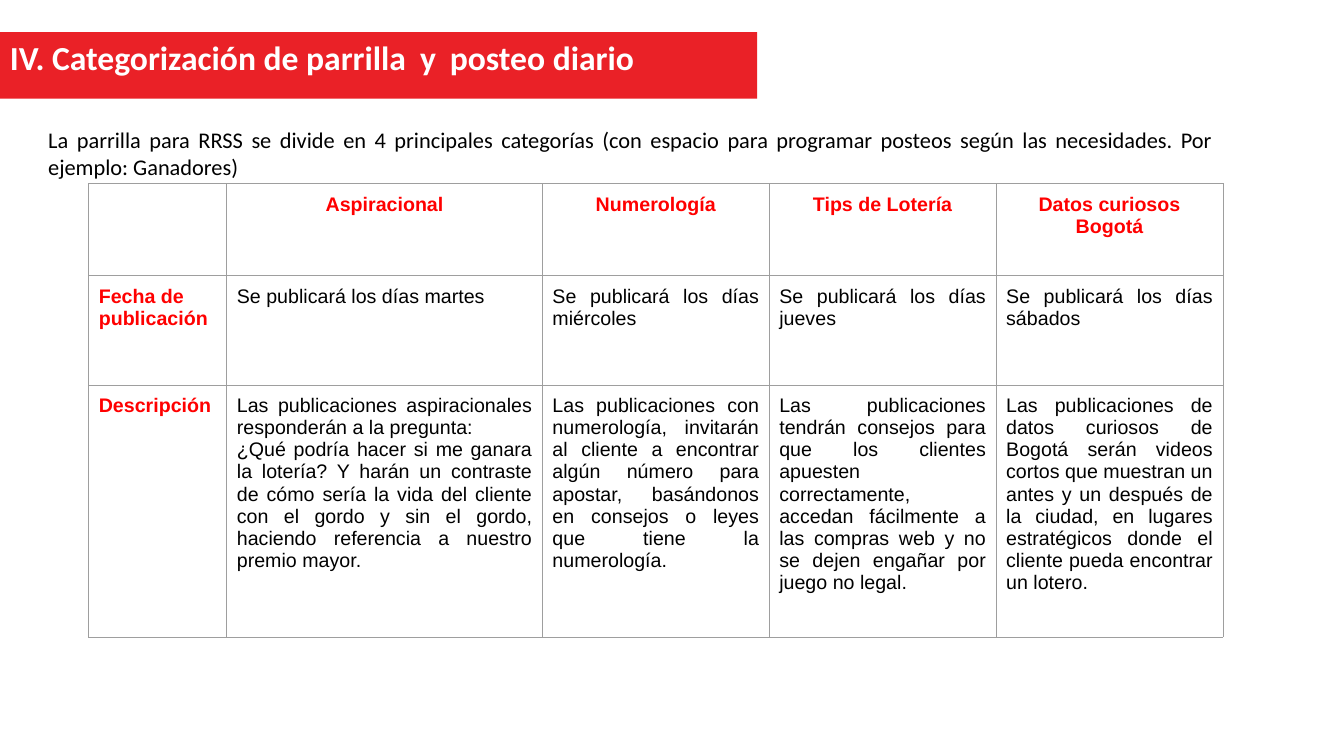
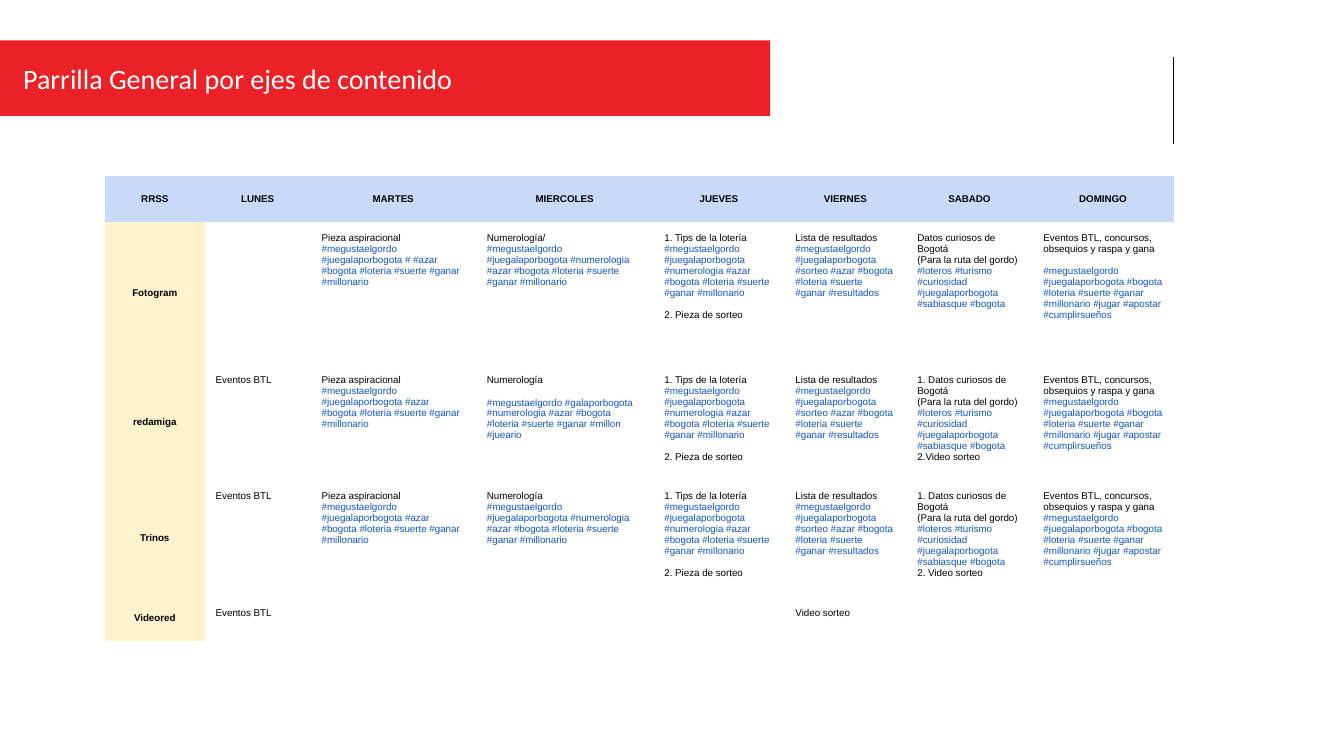
from lxml import etree
from pptx import Presentation
from pptx import util as u
from pptx.dml.color import RGBColor
from pptx.enum import shapes, text
from pptx.oxml.ns import qn

RED = RGBColor(0xEA, 0x21, 0x27)
LABEL_RED = RGBColor(0xFF, 0x00, 0x00)
WHITE = RGBColor(0xFF, 0xFF, 0xFF)
BLACK = RGBColor(0x00, 0x00, 0x00)
TAG_BLUE = RGBColor(0x11, 0x55, 0xCC)
HEADER_BLUE = RGBColor(0xC9, 0xDA, 0xF8)
NETWORK_CREAM = RGBColor(0xFF, 0xF2, 0xCC)
GRID_GREY = "9E9E9E"
PLAIN_TABLE = "{2D5ABB26-0587-4C30-8999-92F81FD0307C}"
TITLE_FONT, TABLE_FONT = "Calibri", "Arial"

INTRO = ("La parrilla para RRSS se divide en 4 principales categorías (con espacio para programar "
         "posteos según las necesidades. Por ejemplo: Ganadores)")

CATEGORIES = [
    [[], ["Aspiracional"], ["Numerología"], ["Tips de Lotería"], ["Datos curiosos Bogotá"]],
    [["Fecha de publicación"]] + [
        [f"Se publicará los días {day}"] for day in ("martes", "miércoles", "jueves", "sábados")],
    [["Descripción"],
     ["Las publicaciones aspiracionales responderán a la pregunta:",
      "¿Qué podría hacer si me ganara la lotería? Y harán un contraste de cómo sería la vida del "
      "cliente con el gordo y sin el gordo, haciendo referencia a nuestro premio mayor."],
     ["Las publicaciones con numerología, invitarán al cliente a encontrar algún número para "
      "apostar, basándonos en consejos o leyes que tiene la numerología."],
     ["Las publicaciones tendrán consejos para que los clientes apuesten correctamente, accedan "
      "fácilmente a las compras web y no se dejen engañar por juego no legal."],
     ["Las publicaciones de datos curiosos de Bogotá serán videos cortos que muestran un antes y "
      "un después de la ciudad, en lugares estratégicos donde el cliente pueda encontrar un "
      "lotero."]],
]

BTL = ["Eventos BTL"]
ASPIRATIONAL = ["Pieza aspiracional",
                "#megustaelgordo #juegalaporbogota #azar #bogota #loteria #suerte #ganar #millonario"]
NUMEROLOGY_TAGS = ("#megustaelgordo #juegalaporbogota #numerologia #azar #bogota #loteria #suerte "
                   "#ganar #millonario")
TIPS = ["1. Tips de la lotería", NUMEROLOGY_TAGS, "", "2. Pieza de sorteo"]
RESULTS = ["Lista de resultados",
           "#megustaelgordo #juegalaporbogota #sorteo #azar #bogota #loteria #suerte #ganar "
           "#resultados"]
FACTS = ["Datos curiosos de Bogotá", "(Para la ruta del gordo)",
         "#loteros #turismo #curiosidad #juegalaporbogota #sabiasque #bogota"]
NUMBERED_FACTS = ["1. " + FACTS[0]] + FACTS[1:]
EVENTS = "Eventos BTL, concursos, obsequios y raspa y gana"
EVENT_TAGS = ("#megustaelgordo #juegalaporbogota #bogota #loteria #suerte #ganar #millonario "
              "#jugar #apostar #cumplirsueños")

WEEK = [
    [[name] for name in ("RRSS", "LUNES", "MARTES", "MIERCOLES", "JUEVES", "VIERNES", "SABADO",
                         "DOMINGO")],
    [["Fotogram"], [],
     ["Pieza aspiracional",
      "#megustaelgordo #juegalaporbogota # #azar #bogota #loteria #suerte #ganar #millonario"],
     ["Numerología/", NUMEROLOGY_TAGS], TIPS, RESULTS, FACTS, [EVENTS, "", EVENT_TAGS]],
    [["redamiga"], BTL, ASPIRATIONAL,
     ["Numerología", "",
      "#megustaelgordo #galaporbogota #numerologia #azar #bogota #loteria #suerte #ganar #millon "
      "#jueario"],
     TIPS, RESULTS, NUMBERED_FACTS + ["2.Video sorteo"], [EVENTS, EVENT_TAGS]],
    [["Trinos"], BTL, ASPIRATIONAL, ["Numerología", NUMEROLOGY_TAGS], TIPS, RESULTS,
     NUMBERED_FACTS + ["2. Video sorteo"], [EVENTS, EVENT_TAGS]],
    [["Videored"], BTL, [], [], [], ["Video sorteo"], [], []],
]


def add_run(p, words, font, size, color, bold=False):
    """Append one formatted run to a paragraph."""
    r = p.add_run()
    r.text = words
    r.font.name, r.font.size, r.font.bold = font, u.Pt(size), bold
    r.font.color.rgb = color
    return r


def add_band(s, top, width, height, left_margin, anchor):
    """Draw the red title band and return its paragraph."""
    sp = s.shapes.add_shape(shapes.MSO_SHAPE.RECTANGLE, 0, u.Inches(top),
                            u.Inches(width), u.Inches(height))
    sp.shadow.inherit = False
    sp.fill.solid()
    sp.fill.fore_color.rgb = RED
    sp.line.fill.background()
    tf = sp.text_frame
    tf.word_wrap = True
    tf.margin_left = u.Inches(left_margin)
    tf.vertical_anchor = anchor
    p = tf.paragraphs[0]
    p.alignment = text.PP_ALIGN.LEFT
    return p


def add_grid(s, left, top, widths, heights):
    """Add an unstyled table with the given column widths and row heights."""
    frame = s.shapes.add_table(len(heights), len(widths), u.Inches(left), u.Inches(top),
                               u.Inches(sum(widths)), u.Inches(sum(heights)))
    table = frame.table
    table.first_row = table.horz_banding = False
    table._tbl.tblPr.find(qn("a:tableStyleId")).text = PLAIN_TABLE
    for column, width in zip(table.columns, widths):
        column.width = u.Inches(width)
    for row, height in zip(table.rows, heights):
        row.height = u.Inches(height)
    return table


def outline_cell(cell):
    """Give a cell a thin grey line on its four sides."""
    tc_pr = cell._tc.get_or_add_tcPr()
    for side in ("lnL", "lnR", "lnT", "lnB"):
        ln = etree.SubElement(tc_pr, qn("a:" + side), w=str(u.Pt(0.75)))
        fill = etree.SubElement(ln, qn("a:solidFill"))
        etree.SubElement(fill, qn("a:srgbClr"), val=GRID_GREY)


def fill_cell(cell, lines, size, margin, align, color=BLACK, bold=False, fill=None):
    """Write lines into a cell, with hashtags in blue and an empty line as a gap."""
    margin = u.Inches(margin)
    cell.margin_left = cell.margin_right = cell.margin_top = cell.margin_bottom = margin
    if fill is None:
        cell.fill.background()
    else:
        cell.fill.solid()
        cell.fill.fore_color.rgb = fill
        cell.vertical_anchor = text.MSO_ANCHOR.MIDDLE
    tf = cell.text_frame
    p = tf.paragraphs[0]
    if not lines:
        etree.SubElement(p._p, qn("a:endParaRPr"), sz=str(size * 100))
    gap = False
    for i, line in enumerate(lines):
        if not line:
            gap = True
            continue
        p = tf.add_paragraph() if i else p
        p.alignment = align
        if gap:
            p.space_before = u.Pt(size * 1.15)
            gap = False
        add_run(p, line, TABLE_FONT, size, TAG_BLUE if line.startswith("#") else color, bold)


def add_category_table(s, left, top):
    """Place the table of post categories."""
    table = add_grid(s, left, top, [1.37, 3.13] + [2.25] * 3, [0.91, 1.09, 2.5])
    for i, row in enumerate(CATEGORIES):
        for j, lines in enumerate(row):
            cell = table.cell(i, j)
            outline_cell(cell)
            label = i == 0 or j == 0
            align = (text.PP_ALIGN.CENTER if i == 0 else
                     text.PP_ALIGN.LEFT if j == 0 else text.PP_ALIGN.JUSTIFY)
            fill_cell(cell, lines, 14, 0.1, align, LABEL_RED if label else BLACK, label)


def add_week_table(s, left, top):
    """Place the weekly schedule by network."""
    table = add_grid(s, left, top, [0.99, 1.05, 1.64, 1.76, 1.3, 1.21, 1.25, 1.4],
                     [0.45, 1.41, 1.11, 1.13, 0.44])
    for i, row in enumerate(WEEK):
        for j, lines in enumerate(row):
            label = i == 0 or j == 0
            fill = HEADER_BLUE if i == 0 else NETWORK_CREAM if j == 0 else None
            align = text.PP_ALIGN.CENTER if label else text.PP_ALIGN.LEFT
            fill_cell(table.cell(i, j), lines, 7, 0.11, align, bold=label, fill=fill)


def add_intro(s, left, top, width, height):
    """Place the justified introduction."""
    tf = s.shapes.add_textbox(u.Inches(left), u.Inches(top),
                              u.Inches(width), u.Inches(height)).text_frame
    tf.word_wrap = True
    p = tf.paragraphs[0]
    p.alignment = text.PP_ALIGN.JUSTIFY
    add_run(p, INTRO, TITLE_FONT, 16, BLACK)


def add_rule(s, x, top, bottom):
    """Draw a thin vertical black line."""
    line = s.shapes.add_connector(shapes.MSO_CONNECTOR.STRAIGHT, u.Inches(x), u.Inches(top),
                                  u.Inches(x), u.Inches(bottom))
    line.line.color.rgb = BLACK
    line.line.width = u.Pt(1)
    etree.SubElement(line._element.spPr, qn("a:effectLst"))


def category_slide(s):
    """Build the slide on categories and daily posts."""
    add_category_table(s, 0.88, 1.82)
    p = add_band(s, 0.32, 7.51, 0.66, 0.1, text.MSO_ANCHOR.TOP)
    for words in ("IV. Categorización de parrilla", " ", "y", " ", "posteo diario"):
        r = add_run(p, words, TITLE_FONT, 24, WHITE, True)
        if words == " ":
            r._r.get_or_add_rPr().set("spc", "450")
    add_intro(s, 0.38, 1.2, 11.75, 0.54)


def week_slide(s):
    """Build the slide with the weekly schedule."""
    add_rule(s, 11.64, 0.57, 1.43)
    p = add_band(s, 0.4, 7.64, 0.75, 0.23, text.MSO_ANCHOR.MIDDLE)
    add_run(p, "Parrilla General por ejes de contenido", TITLE_FONT, 20, WHITE)
    add_week_table(s, 1.04, 1.75)


def main():
    """Build and save the presentation."""
    prs = Presentation()
    prs.slide_width, prs.slide_height = u.Inches(13.33), u.Inches(7.5)
    for build in (category_slide, week_slide):
        build(prs.slides.add_slide(prs.slide_layouts[6]))
    prs.save("out.pptx")


if __name__ == "__main__":
    main()
